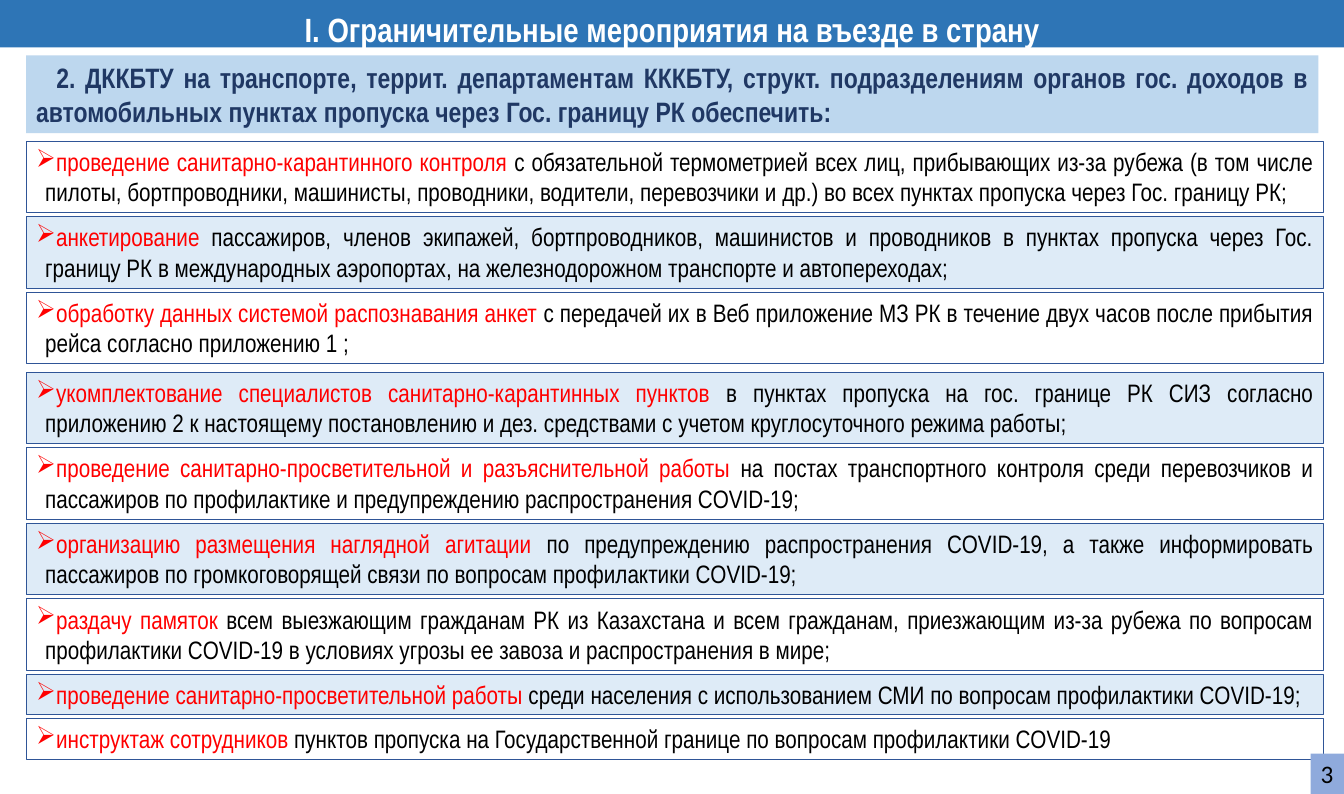
from dataclasses import dataclass

from lxml import etree
from pptx import Presentation
from pptx.dml.color import RGBColor
from pptx.enum.shapes import MSO_SHAPE
from pptx.enum.text import MSO_ANCHOR, MSO_AUTO_SIZE, PP_ALIGN
from pptx.oxml.ns import qn
from pptx.util import Inches, Pt

RECTANGLE = MSO_SHAPE.RECTANGLE
TOP, MIDDLE = MSO_ANCHOR.TOP, MSO_ANCHOR.MIDDLE
GROW, FIXED = MSO_AUTO_SIZE.SHAPE_TO_FIT_TEXT, MSO_AUTO_SIZE.NONE
LEFT, CENTER, JUSTIFY = PP_ALIGN.LEFT, PP_ALIGN.CENTER, PP_ALIGN.JUSTIFY


@dataclass(frozen=True)
class Theme:
    title_fill: str = "2E75B6"
    heading_fill: str = "BDD7EE"
    row_fill: str = "DEEBF7"
    number_fill: str = "8FAADC"
    border: str = "2F5597"
    light: str = "FFFFFF"
    heading: str = "203864"
    accent: str = "FF0000"
    dark: str = "000000"
    font: str = "Arial Narrow"
    number_font: str = "Calibri"
    bullet_font: str = "Wingdings"
    title_size: int = 24
    heading_size: int = 20
    body_size: int = 18
    border_width: float = 0.75


THEME = Theme()

SLIDE_WIDTH, SLIDE_HEIGHT = 40 / 3, 63 / 8
ROW_LEFT, ROW_WIDTH, ROW_GAP = 0.26, 12.87, 0.04
LINE_HEIGHT, ROW_PADDING = 0.31, 0.09
HANGING = 0.09
BULLET = "Ø"  # an arrowhead in the bullet font

TITLE = "І. Ограничительные мероприятия на въезде в страну"
HEADING = (
    "2. ДККБТУ на транспорте, террит. департаментам КККБТУ, структ. подразделениям "
    "органов гос. доходов в автомобильных пунктах пропуска через Гос. границу РК обеспечить:"
)

# Each measure: highlighted words, remaining words, number of text lines
ENTRY_MEASURES = [
    ("проведение санитарно-карантинного контроля ",
     "с обязательной термометрией всех лиц, прибывающих из-за рубежа (в том числе пилоты, "
     "бортпроводники, машинисты, проводники, водители, перевозчики и др.) во всех пунктах "
     "пропуска через Гос. границу РК;", 2),
    ("анкетирование",
     " пассажиров, членов экипажей, бортпроводников, машинистов и проводников в пунктах "
     "пропуска через Гос. границу РК в международных аэропортах, на железнодорожном "
     "транспорте и автопереходах;", 2),
    ("обработку данных системой распознавания анкет ",
     "с передачей их в Веб приложение МЗ РК в течение двух часов после прибытия рейса "
     "согласно приложению 1 ;", 2),
]
SUPPORT_MEASURES = [
    ("укомплектование специалистов санитарно-карантинных пунктов ",
     "в пунктах пропуска на гос. границе РК СИЗ согласно приложению 2 к настоящему "
     "постановлению и дез. средствами с учетом круглосуточного режима работы; ", 2),
    ("проведение санитарно-просветительной и разъяснительной работы ",
     "на постах транспортного контроля среди перевозчиков и пассажиров по профилактике "
     "и предупреждению распространения COVID-19;", 2),
    ("организацию размещения наглядной агитации ",
     "по предупреждению распространения COVID-19, а также информировать пассажиров по "
     "громкоговорящей связи по вопросам профилактики COVID-19;", 2),
    ("раздачу памяток ",
     "всем выезжающим гражданам РК из Казахстана и всем гражданам, приезжающим из-за "
     "рубежа по вопросам профилактики COVID-19 в условиях угрозы ее завоза и "
     "распространения в мире;", 2),
    ("проведение санитарно-просветительной работы ",
     "среди населения с использованием СМИ по вопросам профилактики COVID-19;", 1),
    ("инструктаж сотрудников ",
     "пунктов пропуска на Государственной границе по вопросам профилактики COVID-19", 1),
]


def color(value):
    return RGBColor.from_string(value)


def add_box(slide, box, fill=None, border=None, anchor=TOP, auto_size=GROW, wrap=True):
    shape = slide.shapes.add_shape(RECTANGLE, *(Inches(length) for length in box))
    shape.shadow.inherit = False
    if fill:
        shape.fill.solid()
        shape.fill.fore_color.rgb = color(fill)
    else:
        shape.fill.background()
    if border:
        shape.line.color.rgb = color(border)
        shape.line.width = Pt(THEME.border_width)
    else:
        shape.line.fill.background()
    frame = shape.text_frame
    frame.word_wrap = wrap
    frame.auto_size = auto_size
    frame.vertical_anchor = anchor
    return frame


def style_paragraph(paragraph, size, font_color, alignment, font=THEME.font, bold=False):
    paragraph.alignment = alignment
    paragraph.font.name = font
    paragraph.font.size = Pt(size)
    paragraph.font.bold = bold
    paragraph.font.color.rgb = color(font_color)


def set_indent(paragraph, margin, indent):
    properties = paragraph._p.get_or_add_pPr()
    properties.set("marL", str(Inches(margin)))
    properties.set("indent", str(Inches(indent)))
    return properties


def add_bullet(paragraph):
    properties = set_indent(paragraph, HANGING, -HANGING)
    defaults = properties.find(qn("a:defRPr"))
    bullet_font = etree.Element(qn("a:buFont"), typeface=THEME.bullet_font, charset="2")
    defaults.addprevious(bullet_font)
    defaults.addprevious(etree.Element(qn("a:buChar"), char=BULLET))


def add_title(slide, box):
    frame = add_box(slide, box, THEME.title_fill, anchor=MIDDLE, auto_size=FIXED)
    frame.margin_top, frame.margin_bottom = Inches(0.07), 0
    paragraph = frame.paragraphs[0]
    paragraph.text = TITLE
    paragraph.line_spacing = 1.07
    style_paragraph(paragraph, THEME.title_size, THEME.light, CENTER, bold=True)


def add_heading(slide, box):
    paragraph = add_box(slide, box, THEME.heading_fill).paragraphs[0]
    paragraph.text = HEADING
    style_paragraph(paragraph, THEME.heading_size, THEME.heading, JUSTIFY, bold=True)
    set_indent(paragraph, 0, 0.2)


def add_measure(slide, box, highlight, rest, fill):
    paragraph = add_box(slide, box, fill, THEME.border).paragraphs[0]
    style_paragraph(paragraph, THEME.body_size, THEME.dark, JUSTIFY)
    add_bullet(paragraph)
    for text, font_color in ((highlight, THEME.accent), (rest, THEME.dark)):
        run = paragraph.add_run()
        run.text = text
        run.font.color.rgb = color(font_color)


def add_measures(slide, left, top, width, measures, first_shaded):
    """Stack bordered rows, shading every second one."""
    for index, (highlight, rest, lines) in enumerate(measures):
        height = lines * LINE_HEIGHT + ROW_PADDING
        shaded = (index % 2 == 0) == first_shaded
        fill = THEME.row_fill if shaded else None
        add_measure(slide, (left, top, width, height), highlight, rest, fill)
        top += height + ROW_GAP


def add_page_number(slide, box, number):
    paragraph = add_box(slide, box, THEME.number_fill, wrap=False).paragraphs[0]
    paragraph.text = str(number)
    style_paragraph(paragraph, THEME.body_size, THEME.dark, LEFT, THEME.number_font)


def main():
    presentation = Presentation()
    presentation.slide_width = Inches(SLIDE_WIDTH)
    presentation.slide_height = Inches(SLIDE_HEIGHT)
    slide = presentation.slides.add_slide(presentation.slide_layouts[6])

    # Heading and the two groups of measures
    add_heading(slide, (ROW_LEFT, 0.55, 12.82, 0.77))
    add_measures(slide, ROW_LEFT, 1.4, ROW_WIDTH, ENTRY_MEASURES, first_shaded=False)
    add_measures(slide, ROW_LEFT, 3.69, ROW_WIDTH, SUPPORT_MEASURES, first_shaded=True)

    # Title band and page number
    add_title(slide, (0, 0, SLIDE_WIDTH, 0.47))
    add_page_number(slide, (SLIDE_WIDTH - 0.33, SLIDE_HEIGHT - 0.4, 0.33, 0.4), 3)

    presentation.save("out.pptx")


if __name__ == "__main__":
    main()
